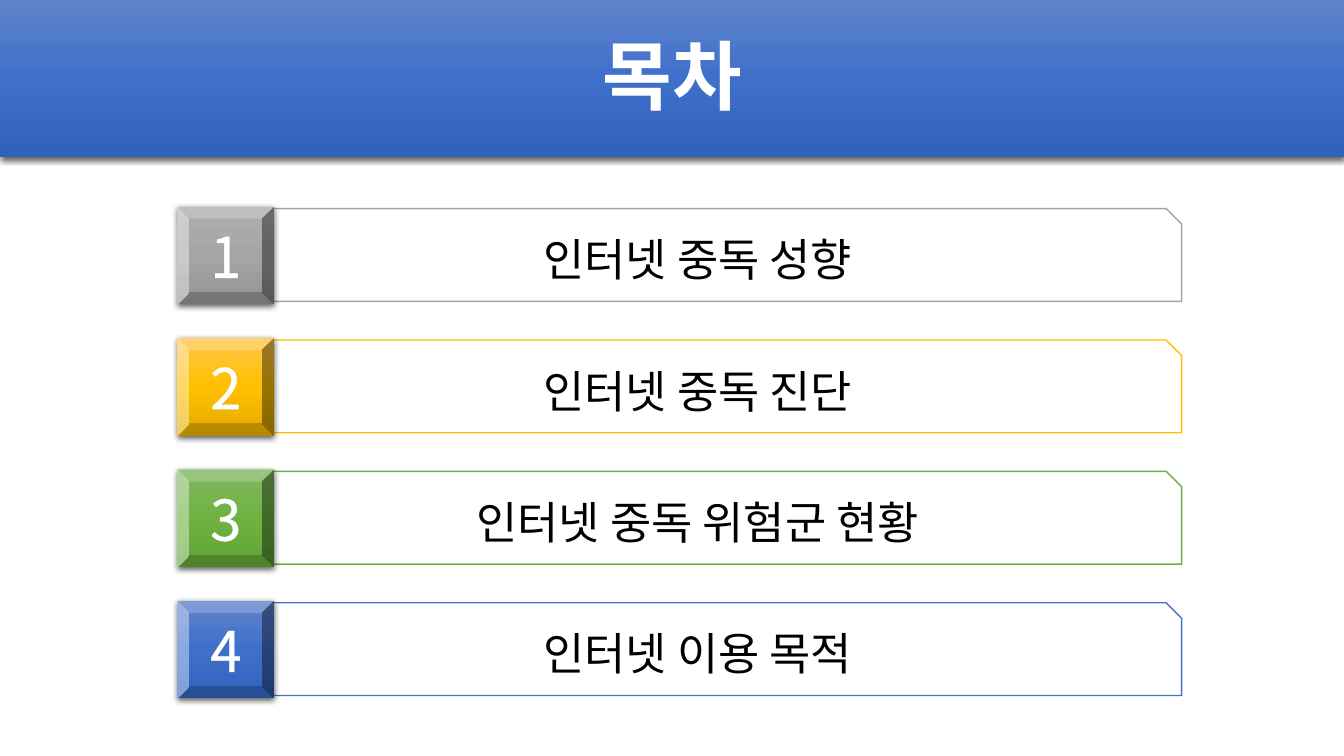
"""Build the contents slide: a title band above four numbered entries."""
from dataclasses import dataclass

from lxml.etree import SubElement
from pptx import Presentation
from pptx.dml.color import RGBColor
from pptx.enum.shapes import MSO_SHAPE as Shape
from pptx.enum.text import MSO_ANCHOR as Anchor, PP_ALIGN as Align
from pptx.oxml.ns import qn
from pptx.util import Inches, Pt

TITLE = "목차"
BLUE_BLEND = ("6183CB", "3E70CA", "3062BB")
ENTRIES = [
    ("인터넷 중독 성향", "A5A5A5", ("AFAFAF", "A5A5A5", "939393")),
    ("인터넷 중독 진단", "FFC000", ("FFC64B", "FFC000", "E3AB00")),
    ("인터넷 중독 위험군 현황", "70AD47", ("81B861", "6FB242", "62A336")),
    ("인터넷 이용 목적", "4472C4", BLUE_BLEND),
]


@dataclass(frozen=True)
class Theme:
    font: str = "Noto Sans CJK KR"
    white: str = "FFFFFF"
    black: str = "000000"
    title_size: float = 54
    number_size: float = 40
    entry_size: float = 32
    outline: float = 1.45


THEME = Theme()
WIDTH, HEIGHT = 13.33, 7.5
BAND_HEIGHT = 1.56
BAR_LEFT, BAR_WIDTH, BAR_HEIGHT = 2.2, 9.52, 0.92
FIRST_TOP, LAST_TOP = 2.07, 5.98
BADGE_LEFT, BADGE_WIDTH, BADGE_HEIGHT, BADGE_RISE = 1.76, 0.96, 0.97, 0.02


def add_box(page, kind, left, top, width, height):
    box = page.shapes.add_shape(kind, *map(Inches, (left, top, width, height)))
    box.shadow.inherit = False
    return box


def add_raised_box(page, kind, place, blend):
    """Add a borderless shape with a vertical blend and a soft shadow."""
    box = add_box(page, kind, *place)
    box.line.fill.background()
    box.fill.gradient()
    box.fill.gradient_angle = 270
    properties = box.fill._xPr
    stops = properties.find(qn("a:gradFill")).find(qn("a:gsLst"))
    for stop in list(stops):
        stops.remove(stop)
    for index, color in enumerate(blend):
        stop = SubElement(stops, qn("a:gs"), pos=str(index * 50000))
        SubElement(stop, qn("a:srgbClr"), val=color)
    shadow = SubElement(
        properties.find(qn("a:effectLst")), qn("a:outerShdw"),
        blurRad=str(Pt(4.5)), dist=str(Pt(1.5)), dir="5400000",
        algn="ctr", rotWithShape="0")
    shade = SubElement(shadow, qn("a:srgbClr"), val=THEME.black)
    SubElement(shade, qn("a:alpha"), val="63000")
    return box


def write(box, text, size, color, bold=False):
    frame = box.text_frame
    frame.word_wrap = True
    frame.vertical_anchor = Anchor.MIDDLE
    para = frame.paragraphs[0]
    para.alignment = Align.CENTER
    span = para.add_run()
    span.text = text
    span.font.size = Pt(size)
    span.font.bold = bold
    span.font.name = THEME.font
    span.font.color.rgb = RGBColor.from_string(color)
    SubElement(span.font._element, qn("a:ea"), typeface=THEME.font)
    return para


def outline_text(span):
    properties = span.font._element
    line = SubElement(properties, qn("a:ln"), w=str(Pt(THEME.outline)))
    fill = SubElement(line, qn("a:solidFill"))
    SubElement(fill, qn("a:srgbClr"), val=THEME.white)
    properties.insert(0, line)


def add_title(page):
    add_raised_box(page, Shape.RECTANGLE, (0, 0, WIDTH, BAND_HEIGHT), BLUE_BLEND)
    box = page.shapes.add_textbox(*map(Inches, (0.92, 0.07, 11.5, 1.45)))
    para = write(box, TITLE, THEME.title_size, THEME.white, bold=True)
    para.line_spacing = 0.9


def add_entry(page, number, top, text, color, blend):
    bar = add_box(page, Shape.SNIP_1_RECTANGLE, BAR_LEFT, top, BAR_WIDTH, BAR_HEIGHT)
    bar.fill.solid()
    bar.fill.fore_color.rgb = RGBColor.from_string(THEME.white)
    bar.line.color.rgb = RGBColor.from_string(color)
    bar.line.width = Pt(1)
    write(bar, text, THEME.entry_size, THEME.black)

    place = (BADGE_LEFT, top - BADGE_RISE, BADGE_WIDTH, BADGE_HEIGHT)
    badge = add_raised_box(page, Shape.BEVEL, place, blend)
    para = write(badge, str(number), THEME.number_size, THEME.white)
    outline_text(para.runs[0])


def main():
    deck = Presentation()
    deck.slide_width, deck.slide_height = Inches(WIDTH), Inches(HEIGHT)
    page = deck.slides.add_slide(deck.slide_layouts[6])
    add_title(page)
    pitch = (LAST_TOP - FIRST_TOP) / (len(ENTRIES) - 1)
    for index, entry in enumerate(ENTRIES):
        add_entry(page, index + 1, FIRST_TOP + index * pitch, *entry)
    deck.save("out.pptx")


if __name__ == "__main__":
    main()
